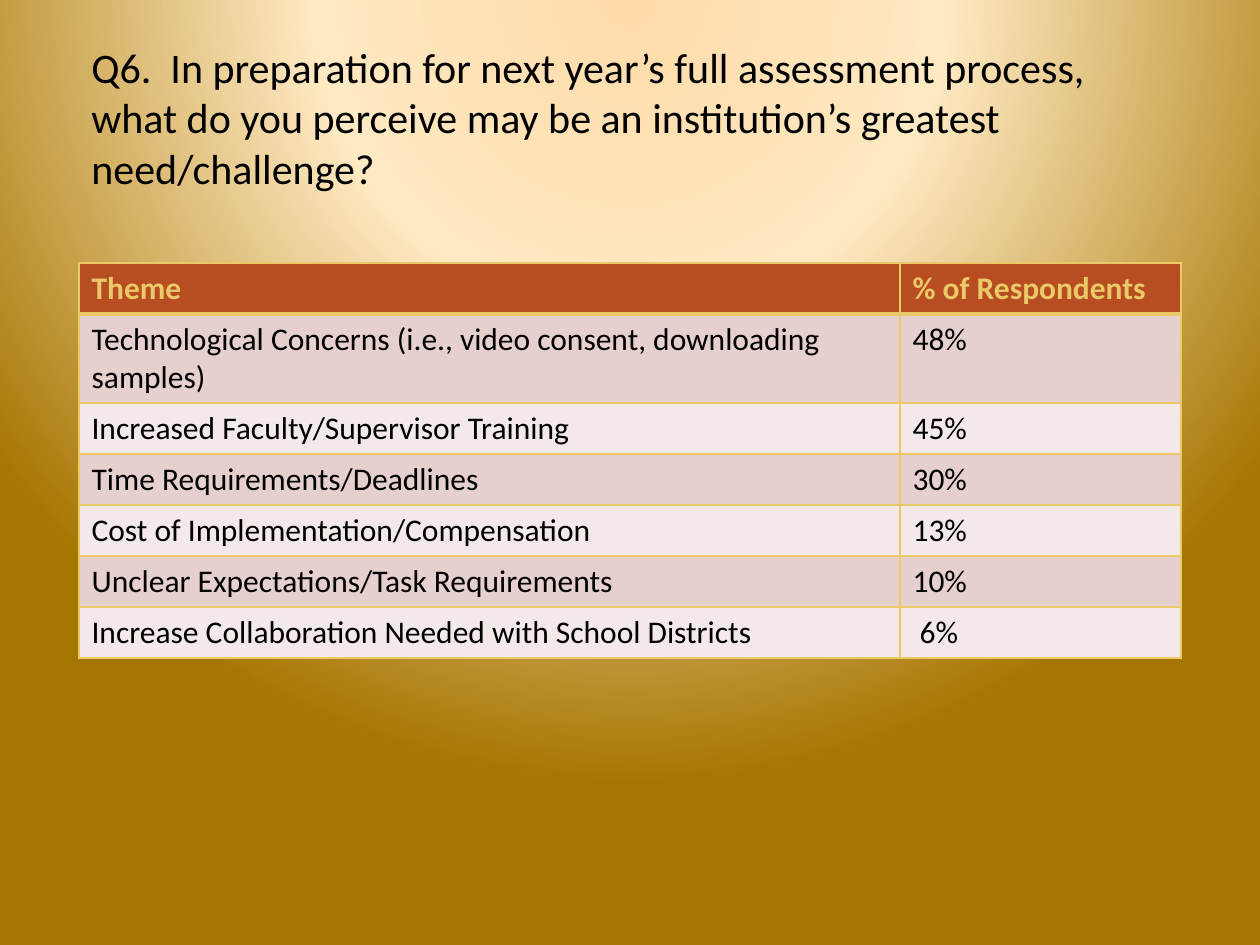
from pptx import Presentation
from pptx.dml.color import RGBColor
from pptx.enum.text import MSO_ANCHOR
from pptx.oxml import parse_xml
from pptx.oxml.ns import nsdecls
from pptx.util import Pt

PX = 914400 / 126
FONT = "Calibri"
BLACK = RGBColor(0x00, 0x00, 0x00)
GOLD = RGBColor(0xEA, 0xC9, 0x68)
RUST = RGBColor(0xB7, 0x4D, 0x21)
ROSE = RGBColor(0xE6, 0xD0, 0xCD)
PALE_ROSE = RGBColor(0xF3, 0xE9, 0xE8)
GLOW = [(0, RGBColor(0xFF, 0xDB, 0xA9)),
        (40, RGBColor(0xFF, 0xE9, 0xC2)),
        (100, RGBColor(0xA6, 0x76, 0x02))]

TITLE = ("Q6.  In preparation for next year’s full assessment process, "
         "what do you perceive may be an institution’s greatest need/challenge?")
ROWS = [
    ("Theme", "% of Respondents"),
    ("Technological Concerns (i.e., video consent, downloading samples)", "48%"),
    ("Increased Faculty/Supervisor Training", "45%"),
    ("Time Requirements/Deadlines", "30%"),
    ("Cost of Implementation/Compensation", "13%"),
    ("Unclear Expectations/Task Requirements", "10%"),
    ("Increase Collaboration Needed with School Districts", " 6%"),
]
ROW_H, TWO_LINE_ROW_H = 51, 89
VALUE_COL_W = 281


def px(n):
    return round(n * PX)


def set_font(p, size, color, bold=False):
    f = p.font
    f.name, f.size, f.bold = FONT, Pt(size), bold
    f.color.rgb = color


def add_background(s):
    stops = "".join(f'<a:gs pos="{pos * 1000}"><a:srgbClr val="{color}"/></a:gs>'
                    for pos, color in GLOW)
    s.element.cSld.insert(0, parse_xml(
        f'<p:bg {nsdecls("p", "a")}><p:bgPr><a:gradFill rotWithShape="1">'
        f'<a:gsLst>{stops}</a:gsLst><a:path path="circle">'
        '<a:fillToRect l="50000" t="-80000" r="50000" b="180000"/></a:path>'
        '</a:gradFill><a:effectLst/></p:bgPr></p:bg>'))


def add_title(s, x, y, w, h):
    tf = s.shapes.add_textbox(px(x), px(y), px(w), px(h)).text_frame
    tf.word_wrap = True
    tf.vertical_anchor = MSO_ANCHOR.MIDDLE
    p = tf.paragraphs[0]
    p.text = TITLE
    set_font(p, 24, BLACK)


def set_borders(cell, **widths):
    """Draw gold borders; widths in points, keyed by side L, R, T, B."""
    tc_pr = cell._tc.get_or_add_tcPr()
    for i, (side, width) in enumerate(widths.items()):
        tc_pr.insert(i, parse_xml(
            f'<a:ln{side} {nsdecls("a")} w="{Pt(width)}"><a:solidFill>'
            f'<a:srgbClr val="{GOLD}"/></a:solidFill></a:ln{side}>'))


def add_themes_table(s, x, y, w):
    heights = [ROW_H] * len(ROWS)
    heights[1] = TWO_LINE_ROW_H
    table = s.shapes.add_table(len(ROWS), 2, px(x), px(y), px(w),
                               px(sum(heights))).table
    table.columns[0].width = px(w - VALUE_COL_W)
    table.columns[1].width = px(VALUE_COL_W)
    for i, (row, height) in enumerate(zip(ROWS, heights)):
        table.rows[i].height = px(height)
        header = i == 0
        fill = RUST if header else ROSE if i % 2 else PALE_ROSE
        for j, text in enumerate(row):
            cell = table.cell(i, j)
            cell.fill.solid()
            cell.fill.fore_color.rgb = fill
            # The heavy rule under the header belongs to both rows it divides
            set_borders(cell, L=1, R=1, T=3 if i == 1 else 1, B=3 if header else 1)
            p = cell.text_frame.paragraphs[0]
            p.text = text
            set_font(p, 18, GOLD if header else BLACK, header)


def main():
    prs = Presentation()
    prs.slide_width, prs.slide_height = px(1260), px(945)
    s = prs.slides.add_slide(prs.slide_layouts[6])
    add_background(s)
    add_title(s, 79, 38, 1102, 158)
    add_themes_table(s, 79, 263, 1102)
    prs.save("out.pptx")


if __name__ == "__main__":
    main()
